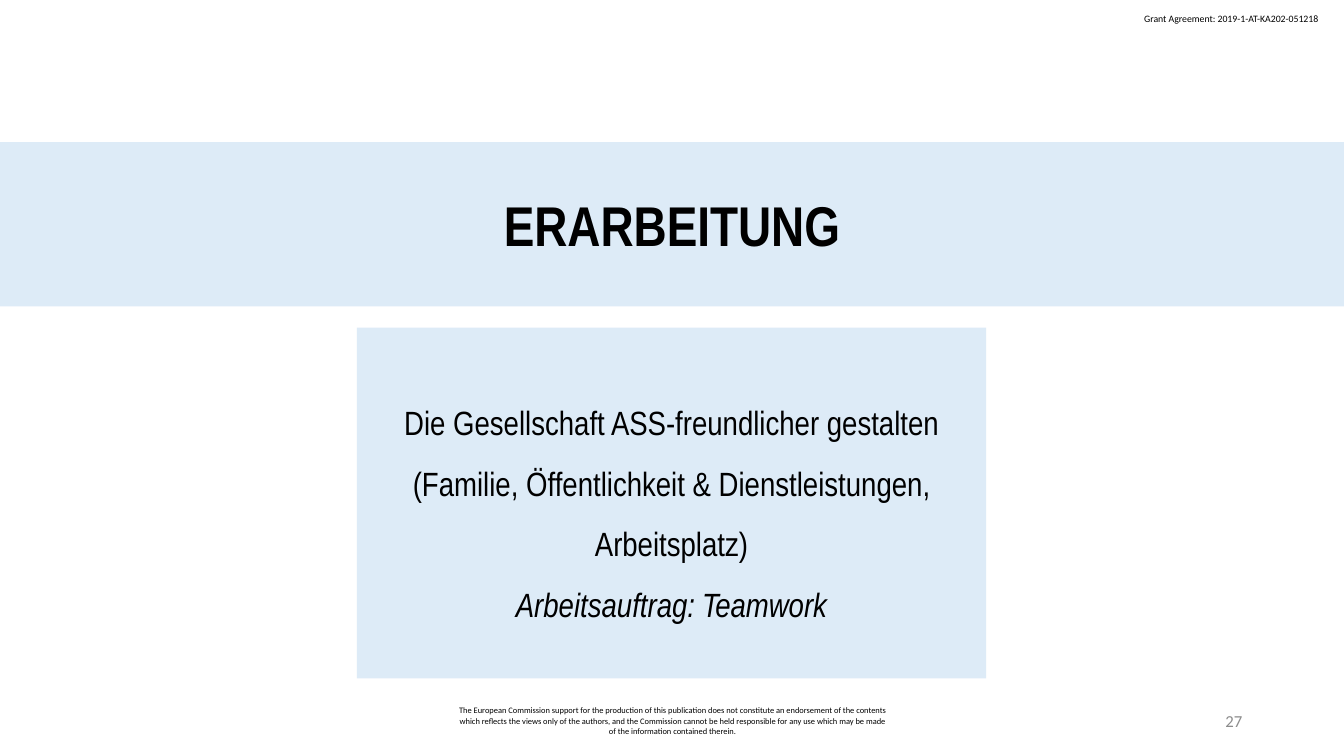
from dataclasses import dataclass

import pptx
import pptx.dml.color
import pptx.enum.shapes
import pptx.enum.text
import pptx.util

Inches = pptx.util.Inches
ALIGN = pptx.enum.text.PP_ALIGN
ANCHOR = pptx.enum.text.MSO_ANCHOR

BLACK = "000000"
GRAY = "8C8C8C"
PALE_BLUE = "DDEBF7"


@dataclass(frozen=True)
class Line:
    text: str
    italic: bool = False


@dataclass(frozen=True)
class Block:
    left: float
    top: float
    width: float
    height: float
    lines: tuple[Line, ...]
    size: float
    font: str = "Calibri"
    color: str = BLACK
    bold: bool = False
    align: ALIGN = ALIGN.CENTER
    anchor: ANCHOR = ANCHOR.MIDDLE
    spacing: float = 1.0
    wrap: bool = True
    fill: str | None = None
    margin_x: float = 0.1
    margin_y: float = 0.05


def rgb(color: str) -> pptx.dml.color.RGBColor:
    return pptx.dml.color.RGBColor.from_string(color)


def draw_block(slide: pptx.slide.Slide, block: Block) -> None:
    box = [Inches(v) for v in (block.left, block.top, block.width, block.height)]
    if block.fill:
        shape = slide.shapes.add_shape(pptx.enum.shapes.MSO_SHAPE.RECTANGLE, *box)
        shape.shadow.inherit = False
        shape.fill.solid()
        shape.fill.fore_color.rgb = rgb(block.fill)
        shape.line.fill.background()
    else:
        shape = slide.shapes.add_textbox(*box)

    frame = shape.text_frame
    frame.word_wrap = block.wrap
    frame.vertical_anchor = block.anchor
    frame.margin_left = frame.margin_right = Inches(block.margin_x)
    frame.margin_top = frame.margin_bottom = Inches(block.margin_y)
    if not block.wrap:
        frame.auto_size = pptx.enum.text.MSO_AUTO_SIZE.SHAPE_TO_FIT_TEXT

    for index, line in enumerate(block.lines):
        paragraph = frame.add_paragraph() if index else frame.paragraphs[0]
        paragraph.text = line.text
        paragraph.alignment = block.align
        paragraph.line_spacing = block.spacing
        paragraph.font.name = block.font
        paragraph.font.size = pptx.util.Pt(block.size)
        paragraph.font.bold = block.bold
        paragraph.font.italic = line.italic
        paragraph.font.color.rgb = rgb(block.color)


BLOCKS = (
    # Grant reference
    Block(11.25, 0.08, 1.97, 0.22,
          (Line("Grant Agreement: 2019-1-AT-KA202-051218"),), 7,
          align=ALIGN.LEFT, anchor=ANCHOR.TOP, wrap=False),
    # Footer and slide number
    Block(4.42, 6.95, 4.5, 0.4,
          (Line("The European Commission support for the production of this publication "
                "does not constitute an endorsement of the contents which reflects the "
                "views only of the authors, and the Commission cannot be held responsible "
                "for any use which may be made of the information contained therein."),), 6),
    Block(9.42, 6.95, 3, 0.4, (Line("27"),), 12, color=GRAY, align=ALIGN.RIGHT),
    # Title band
    Block(0, 1.41, 13.33, 1.63, (Line("ERARBEITUNG"),), 40, "Arial Narrow",
          bold=True, fill=PALE_BLUE, margin_x=0.13, margin_y=0.07),
    # Topic and assignment
    Block(3.54, 3.25, 6.24, 3.48,
          (Line("Die Gesellschaft ASS-freundlicher gestalten "
                "(Familie, Öffentlichkeit & Dienstleistungen, Arbeitsplatz)"),
           Line("Arbeitsauftrag: Teamwork", italic=True)), 24, "Arial Narrow",
          spacing=1.5, fill=PALE_BLUE, margin_x=0.13, margin_y=0.07),
)


def main() -> None:
    presentation = pptx.Presentation()
    presentation.slide_width = Inches(13.33)
    presentation.slide_height = Inches(7.5)
    slide = presentation.slides.add_slide(presentation.slide_layouts[6])
    for block in BLOCKS:
        draw_block(slide, block)
    presentation.save("out.pptx")


if __name__ == "__main__":
    main()
